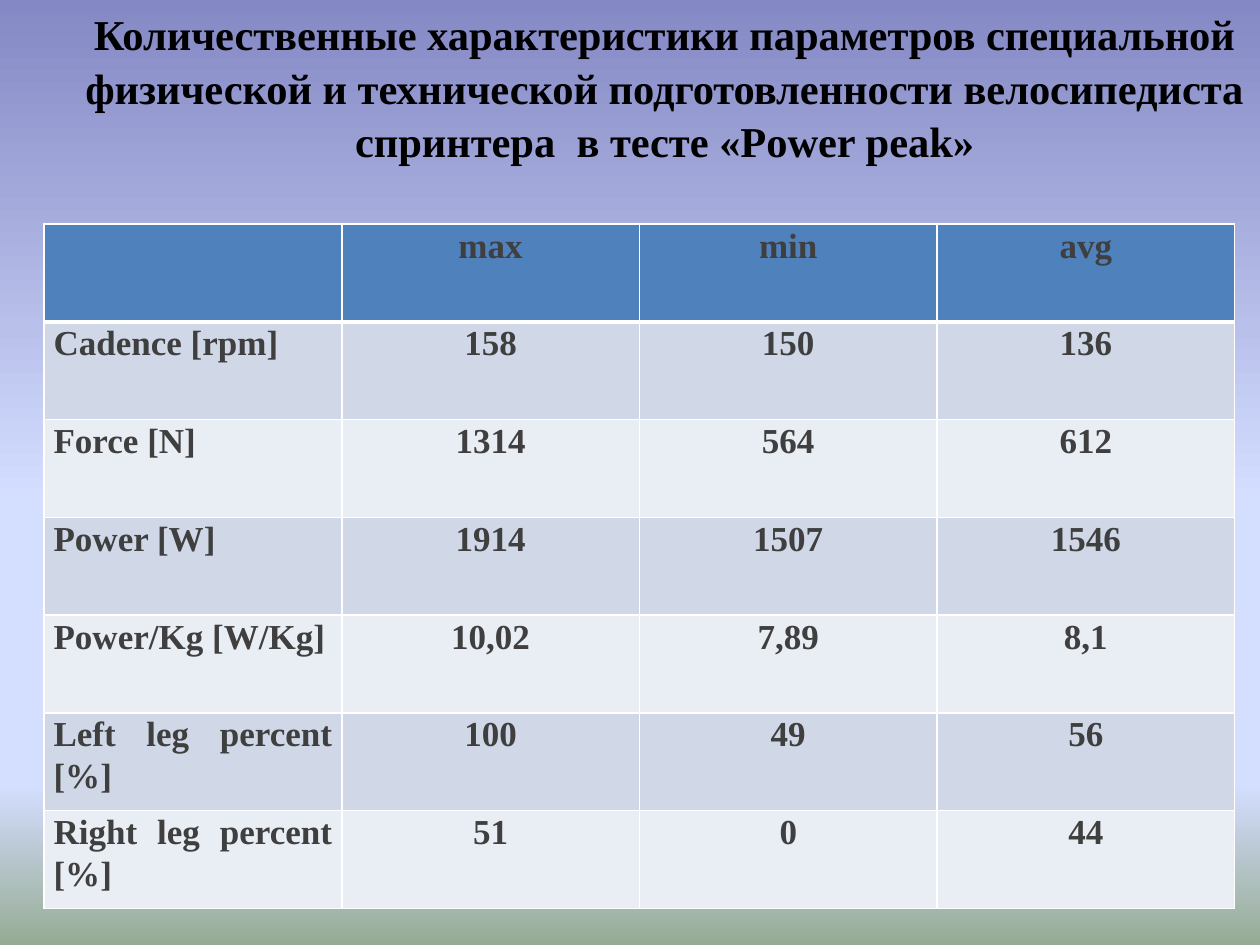
from dataclasses import dataclass

from lxml.etree import SubElement as Sub
from pptx import Presentation
from pptx.dml.color import RGBColor as Rgb
from pptx.enum.text import MSO_ANCHOR as Anchor, PP_ALIGN as Align
from pptx.oxml.ns import qn
from pptx.util import Cm, Pt


@dataclass(frozen=True)
class Theme:
    """Hold the colours and type sizes of the slide."""
    font: str = "Times New Roman"
    title: str = "000000"
    body: str = "3F3F3F"
    head: str = "4F81BD"
    bands: tuple = ("D0D8E8", "E9EDF4")
    rule: str = "FFFFFF"
    sky: tuple = ((0, "8488C4"), (53, "D4DEFF"), (83, "D4DEFF"), (100, "96AB94"))
    big: float = 24.3
    small: float = 20


THEME = Theme()
TITLE = ("Количественные характеристики параметров специальной физической "
         "и технической подготовленности велосипедиста спринтера  "
         "в тесте «Power peak»")
ROWS = (
    ("", "max", "min", "avg"),
    ("Cadence [rpm]", "158", "150", "136"),
    ("Force [N]", "1314", "564", "612"),
    ("Power [W]", "1914", "1507", "1546"),
    ("Power/Kg [W/Kg]", "10,02", "7,89", "8,1"),
    ("Left leg percent [%]", "100", "49", "56"),
    ("Right leg percent [%]", "51", "0", "44"),
)


def apply(item, form):
    """Set each attribute named in a dict of format values."""
    for name, value in form.items():
        setattr(item, name, value)


def write(frame, text, size, color, align, space):
    """Fill a text frame with one bold paragraph."""
    para = frame.paragraphs[0]
    apply(para, {"alignment": align, "line_spacing": space,
                 "space_before": Pt(0), "space_after": Pt(0)})
    run = para.add_run()
    run.text = text
    apply(run.font, {"name": THEME.font, "size": Pt(size), "bold": True})
    run.font.color.rgb = Rgb.from_string(color)


def paint(slide):
    """Give the slide its vertical four-stop gradient."""
    fill = slide.background.fill
    fill.gradient()
    fill.gradient_angle = 270
    stops = next(slide.element.iter(qn("a:gsLst")))
    stops.clear()
    for place, color in THEME.sky:
        stop = Sub(stops, qn("a:gs"), pos=str(place * 1000))
        Sub(stop, qn("a:srgbClr"), val=color)


def border(cell, top, bottom):
    """Draw the four edges of a cell, with widths in points."""
    props = cell._tc.get_or_add_tcPr()
    for side, width in (("L", 1), ("R", 1), ("T", top), ("B", bottom)):
        line = Sub(props, qn(f"a:ln{side}"), w=str(Pt(width)))
        Sub(Sub(line, qn("a:solidFill")), qn("a:srgbClr"), val=THEME.rule)


def heading(slide, left, top, width, height):
    """Place the title in its box."""
    title = slide.shapes.title
    apply(title, {"left": left, "top": top, "width": width, "height": height})
    frame = title.text_frame
    apply(frame, {"word_wrap": True, "vertical_anchor": Anchor.TOP,
                  "margin_top": Cm(0.13), "margin_bottom": Cm(0)})
    write(frame, TITLE, THEME.big, THEME.title, Align.CENTER, 1.04)


def grid(slide, left, top, width, height):
    """Place the table of test results in its box."""
    table = slide.shapes.add_table(
        len(ROWS), len(ROWS[0]), left, top, width, height).table
    for r, row in enumerate(ROWS):
        color = THEME.bands[(r - 1) % 2] if r else THEME.head
        for c, text in enumerate(row):
            cell = table.cell(r, c)
            apply(cell, {"margin_left": Cm(0.19), "margin_right": Cm(0.19),
                         "margin_top": 0, "margin_bottom": 0,
                         "vertical_anchor": Anchor.TOP})
            border(cell, 3 if r == 1 else 1, 1 if r else 3)
            cell.fill.solid()
            cell.fill.fore_color.rgb = Rgb.from_string(color)
            if text:
                first = Align.LEFT if r == 1 else Align.JUSTIFY
                align = Align.CENTER if c else first
                write(cell.text_frame, text, THEME.small, THEME.body, align, 1.07)


def main():
    """Build and save the slide."""
    deck = Presentation()
    apply(deck, {"slide_width": Cm(25.4), "slide_height": Cm(19.05)})
    slide = deck.slides.add_slide(deck.slide_layouts[5])
    paint(slide)
    heading(slide, Cm(1.4), Cm(0), Cm(24), Cm(3.73))
    grid(slide, Cm(0.89), Cm(4.52), Cm(24), Cm(13.79))
    deck.save("out.pptx")


if __name__ == "__main__":
    main()
